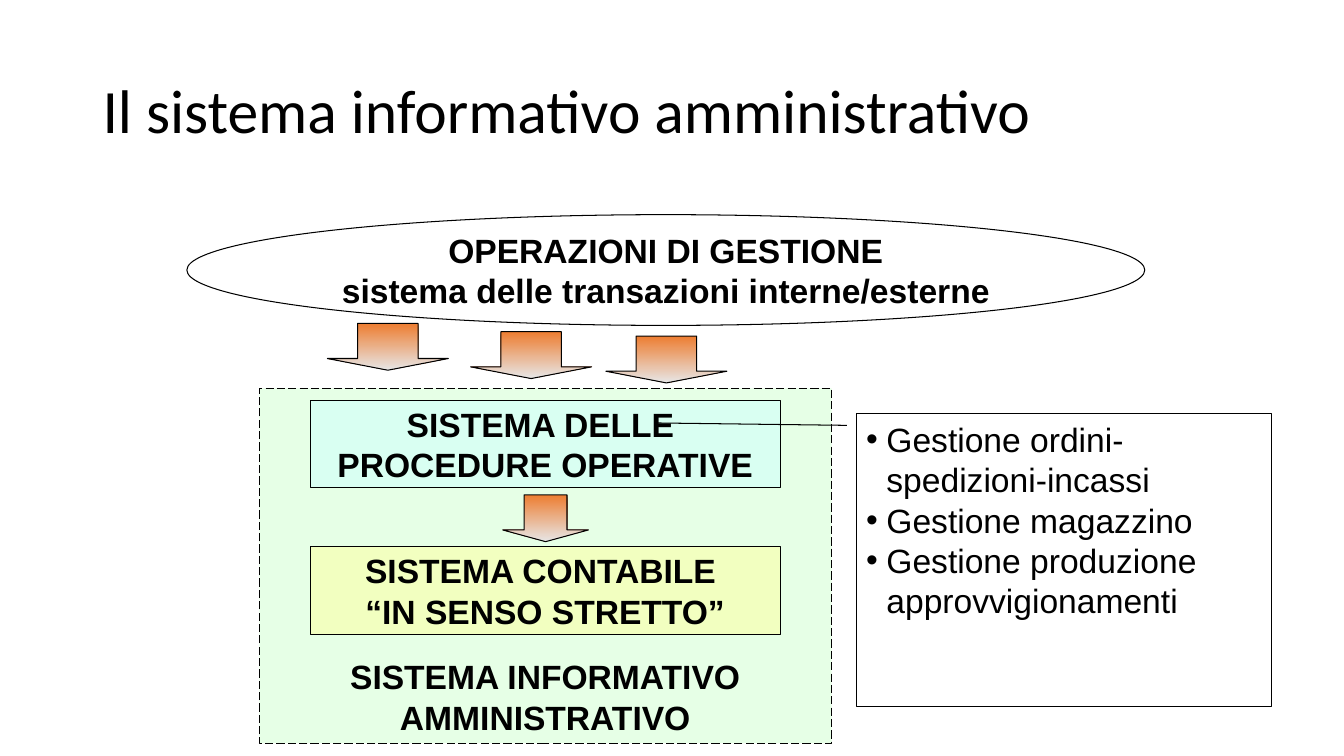
from lxml import etree
from pptx import Presentation
from pptx.dml.color import RGBColor
from pptx.enum.dml import MSO_LINE
from pptx.enum.shapes import MSO_SHAPE
from pptx.enum.text import MSO_ANCHOR, PP_ALIGN
from pptx.oxml.ns import qn
from pptx.util import Cm, Pt

RECT, OVAL = MSO_SHAPE.RECTANGLE, MSO_SHAPE.OVAL
ARROW, CALLOUT = MSO_SHAPE.DOWN_ARROW, MSO_SHAPE.LINE_CALLOUT_1
LEFT, CENTER = PP_ALIGN.LEFT, PP_ALIGN.CENTER
TOP, MIDDLE = MSO_ANCHOR.TOP, MSO_ANCHOR.MIDDLE

# Positions are left, top, width, height in cm
TITLE = "Il sistema informativo amministrativo"
TITLE_AT = (2.33, 1.01, 29.21, 3.68)
SYSTEM_AT = (6.54, 9.79, 14.42, 8.94)
SYSTEM_LABEL = ["SISTEMA INFORMATIVO AMMINISTRATIVO"]
SYSTEM_LABEL_AT = (8.25, 16.41, 10.98, 2.31)
BLOCKS = [
    (RECT, (7.82, 10.09, 11.84, 2.19), "CCFFFF", ["SISTEMA DELLE ", "PROCEDURE OPERATIVE"]),
    (OVAL, (4.71, 5.41, 24.14, 2.79), "FFFFFF",
     ["OPERAZIONI DI GESTIONE", "sistema delle transazioni interne/esterne"]),
    (RECT, (7.82, 13.78, 11.84, 2.21), "FFFF99", ["SISTEMA CONTABILE ", "“IN SENSO STRETTO”"]),
]
ARROW_HEIGHT = 1.18
ARROWS = [(8.25, 8.15, 3.05), (11.86, 8.36, 3.05), (15.27, 8.47, 3.05), (12.67, 12.47, 2.16)]
PROCEDURES = ["Gestione ordini-spedizioni-incassi", "Gestione magazzino",
              "Gestione produzione approvvigionamenti"]
PROCEDURES_AT = (21.58, 10.43, 10.47, 7.38)
POINTER = ((21.34, 10.72), (16.56, 10.66))
BULLET_INDENT = 0.51


def color(hex_code):
    return RGBColor.from_string(hex_code)


def add_figure(kind, at, fill=None):
    """Add an outlined shape, with a half-transparent fill if one is given."""
    figure = slide.shapes.add_shape(kind, *map(Cm, at))
    figure.shadow.inherit = False
    figure.line.color.rgb = color("000000")
    figure.line.width = Pt(0.75)
    if fill:
        figure.fill.solid()
        figure.fill.fore_color.rgb = color(fill)
        tint = figure.fill._xPr.find(qn("a:solidFill"))[0]
        etree.SubElement(tint, qn("a:alpha"), val="49000")
    else:
        figure.fill.background()
    return figure


def write(holder, lines, align=CENTER, anchor=MIDDLE, bold=True, size=24, font="Arial"):
    frame = holder.text_frame
    frame.word_wrap = True
    frame.vertical_anchor = anchor
    frame.text = "\n".join(lines)
    for paragraph in frame.paragraphs:
        paragraph.alignment = align
        for run in paragraph.runs:
            run.font.size, run.font.name, run.font.bold = Pt(size), font, bold
            run.font.color.rgb = color("000000")


def add_bullet(paragraph):
    properties = paragraph._p.get_or_add_pPr()
    indent = Cm(BULLET_INDENT)
    properties.set("marL", str(indent))
    properties.set("indent", str(-indent))
    etree.SubElement(properties, qn("a:buFont"), typeface="Arial")
    etree.SubElement(properties, qn("a:buChar"), char="•")


deck = Presentation()
deck.slide_width, deck.slide_height = Cm(33.87), Cm(19.05)
slide = deck.slides.add_slide(deck.slide_layouts[5])

title = slide.shapes.title
title.left, title.top, title.width, title.height = map(Cm, TITLE_AT)
write(title, [TITLE], align=LEFT, bold=False, size=44, font="Calibri")
title.text_frame.paragraphs[0].line_spacing = 0.9

system = add_figure(RECT, SYSTEM_AT, "CCFFCC")
system.line.dash_style = MSO_LINE.LONG_DASH

for kind, at, fill, lines in BLOCKS:
    write(add_figure(kind, at, fill), lines)

system_label = slide.shapes.add_textbox(*map(Cm, SYSTEM_LABEL_AT))
write(system_label, SYSTEM_LABEL, anchor=TOP)

for left, top, width in ARROWS:
    arrow = add_figure(ARROW, (left, top, width, ARROW_HEIGHT))
    arrow.adjustments[0], arrow.adjustments[1] = 0.5, 0.25
    arrow.fill.gradient()
    arrow.fill.gradient_angle = 270
    for stop, position, shade in zip(arrow.fill.gradient_stops, (0, 1), ("ED7D31", "E7E6E6")):
        stop.position = position
        stop.color.rgb = color(shade)

procedures = add_figure(CALLOUT, PROCEDURES_AT)
left, top, width, height = PROCEDURES_AT
for end, (x, y) in enumerate(POINTER):
    procedures.adjustments[2 * end] = (y - top) / height
    procedures.adjustments[2 * end + 1] = (x - left) / width
write(procedures, PROCEDURES, align=LEFT, anchor=TOP, bold=False)
for paragraph in procedures.text_frame.paragraphs:
    add_bullet(paragraph)

deck.save("out.pptx")
